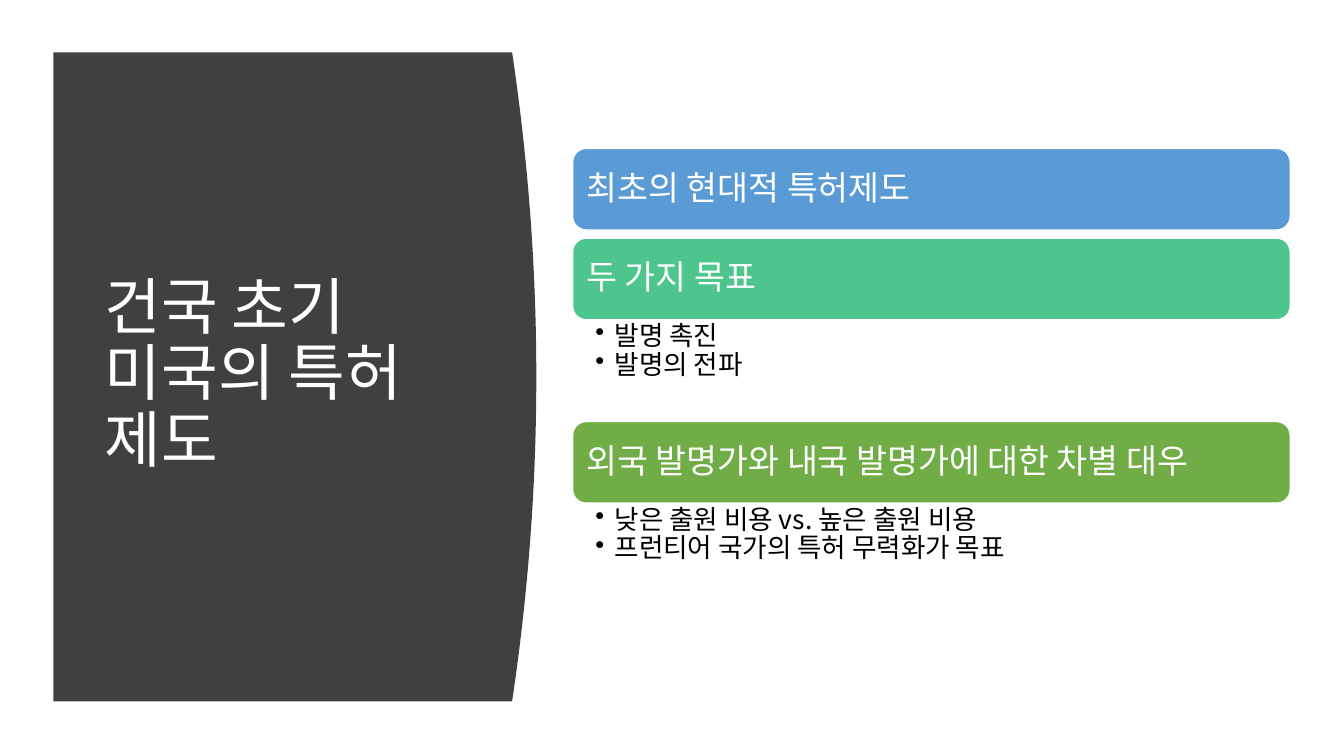
from dataclasses import dataclass

from lxml import etree
from pptx import Presentation
from pptx.dml.color import RGBColor
from pptx.enum.shapes import MSO_SHAPE
from pptx.enum.text import MSO_ANCHOR, MSO_AUTO_SIZE, PP_ALIGN
from pptx.oxml.ns import qn
from pptx.util import Pt

ROUND_RECT = MSO_SHAPE.ROUNDED_RECTANGLE
MIDDLE, TOP = MSO_ANCHOR.MIDDLE, MSO_ANCHOR.TOP
LEFT = PP_ALIGN.LEFT
NO_AUTOFIT = MSO_AUTO_SIZE.NONE
TITLE_ONLY = 5


@dataclass(frozen=True)
class Theme:
    font: str = "Noto Sans CJK KR"
    panel: str = "404040"
    white: str = "FFFFFF"
    black: str = "000000"
    blue: str = "5B9BD5"
    teal: str = "4DC58D"
    green: str = "70AD47"
    title_size: float = 44
    bar_size: float = 24
    bullet_size: float = 19


THEME = Theme()

TITLE = ["건국 초기 \v미국의 특허 제도"]
SECTIONS = [
    ("최초의 현대적 특허제도", THEME.blue, []),
    ("두 가지 목표", THEME.teal, ["발명 촉진", "발명의 전파"]),
    ("외국 발명가와 내국 발명가에 대한 차별 대우", THEME.green,
     ["낮은 출원 비용 vs. 높은 출원 비용", "프런티어 국가의 특허 무력화가 목표"]),
]


def rgb(color):
    return RGBColor.from_string(color)


def add_bullet(p, indent=13.7):
    pPr = p._p.get_or_add_pPr()
    pPr.set("marL", str(Pt(indent)))
    pPr.set("indent", str(-Pt(indent)))
    etree.SubElement(pPr, qn("a:buChar")).set("char", "•")


def write(sp, lines, size, color, anchor=MIDDLE, insets=(7.2, 7.2, 7.2, 7.2),
          bullets=False):
    """Fill a shape with one paragraph per line; insets are left, top, right, bottom."""
    tf = sp.text_frame
    tf.word_wrap = True
    tf.auto_size = NO_AUTOFIT
    tf.vertical_anchor = anchor
    tf.margin_left, tf.margin_top, tf.margin_right, tf.margin_bottom = map(Pt, insets)
    for i, line in enumerate(lines):
        p = tf.paragraphs[0] if i == 0 else tf.add_paragraph()
        p.text = line
        p.alignment = LEFT
        p.line_spacing = 0.9
        if bullets:
            add_bullet(p)
        for r in p.runs:
            r.font.size = Pt(size)
            r.font.color.rgb = rgb(color)
            r.font.name = THEME.font
            ea = etree.SubElement(r._r.get_or_add_rPr(), qn("a:ea"))
            ea.set("typeface", THEME.font)


def add_title_panel(slide, x, y, w, h, bulge=17.3, steps=48):
    """Dark panel whose right edge is a parabola, with the slide title on it."""
    edge = [(x + w - bulge * (2 * i / steps - 1) ** 2, y + h * i / steps)
            for i in range(steps + 1)]
    builder = slide.shapes.build_freeform(Pt(x), Pt(y))
    builder.add_line_segments([(Pt(px), Pt(py)) for px, py in edge + [(x, y + h)]])
    panel = builder.convert_to_shape()
    panel.fill.solid()
    panel.fill.fore_color.rgb = rgb(THEME.panel)
    panel.line.fill.background()
    panel.shadow.inherit = False

    title = slide.shapes.title
    title.left, title.top = Pt(x + 29.5), Pt(y + 42.5)
    title.width, title.height = Pt(269.3), Pt(h - 86.4)
    write(title, TITLE, THEME.title_size, THEME.white, insets=(7.2, 3.6, 7.2, 3.6))
    title._element.addprevious(panel._element)


def add_bar(slide, x, y, w, h, text, color):
    sp = slide.shapes.add_shape(ROUND_RECT, Pt(x), Pt(y), Pt(w), Pt(h))
    sp.shadow.inherit = False
    sp.fill.solid()
    sp.fill.fore_color.rgb = rgb(color)
    sp.line.color.rgb = rgb(THEME.white)
    sp.line.width = Pt(1)
    write(sp, [text], THEME.bar_size, THEME.white)


def add_sections(slide, x, y, w, bar_h=58.3, list_h=72.7, gap=5.8):
    """Stack the bars, each followed by its bullet list or by a gap."""
    for heading, color, points in SECTIONS:
        add_bar(slide, x, y, w, bar_h, heading, color)
        y += bar_h
        if points:
            box = slide.shapes.add_textbox(Pt(x), Pt(y), Pt(w), Pt(list_h))
            write(box, points, THEME.bullet_size, THEME.black, anchor=TOP,
                  insets=(16.3, 2.2, 13.7, 2.2), bullets=True)
        y += list_h if points else gap


def main():
    prs = Presentation()
    prs.slide_width, prs.slide_height = Pt(960), Pt(540)
    slide = prs.slides.add_slide(prs.slide_layouts[TITLE_ONLY])
    add_title_panel(slide, 38.2, 37.4, 344.9, 463.7)
    add_sections(slide, 409, 106, 512.6)
    prs.save("out.pptx")


if __name__ == "__main__":
    main()
